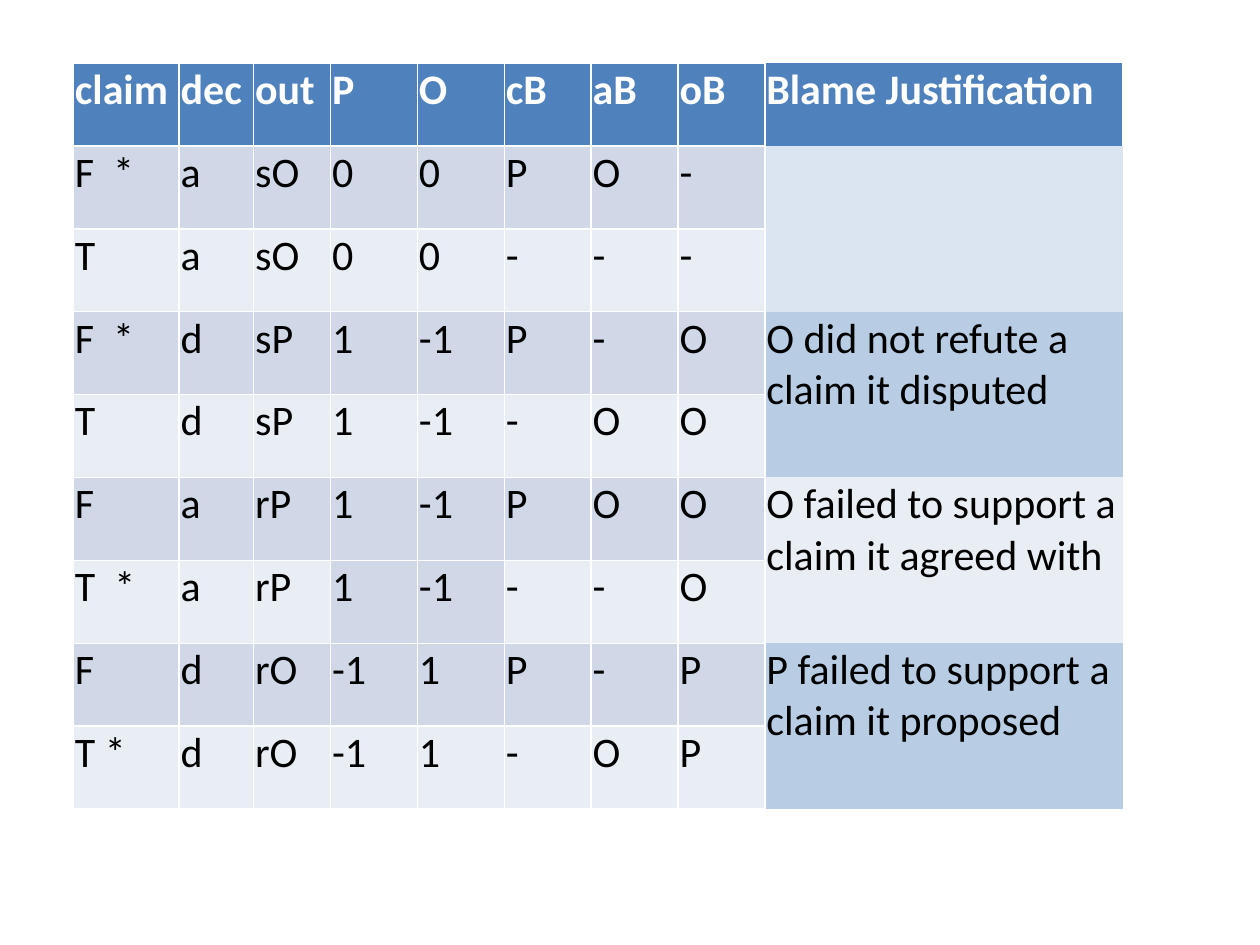
import pptx
import pptx.dml.color
import pptx.oxml
import pptx.oxml.ns
import pptx.util

Cm = pptx.util.Cm
Pt = pptx.util.Pt

HUES = {
    "head": "4F81BD", "odd": "D0D8E8", "even": "E9EDF4",
    "pale": "DBE5F1", "mid": "B8CCE4",
    "white": "FFFFFF", "black": "000000",
}
WIDTHS = [2.13, 1.5, 1.55] + [1.75] * 5 + [7.21]
HEADS = ["claim", "dec", "out", "P", "O", "cB", "aB", "oB",
         "Blame Justification"]
CASES = [
    ["F  *", "a", "sO", "0", "0", "P", "O", "-"],
    ["T", "a", "sO", "0", "0", "-", "-", "-"],
    ["F  *", "d", "sP", "1", "-1", "P", "-", "O"],
    ["T", "d", "sP", "1", "-1", "-", "O", "O"],
    ["F", "a", "rP", "1", "-1", "P", "O", "O"],
    ["T  *", "a", "rP", "1", "-1", "-", "-", "O"],
    ["F", "d", "rO", "-1", "1", "P", "-", "P"],
    ["T *", "d", "rO", "-1", "1", "-", "O", "P"],
]
# Each reason covers two cases
REASONS = [
    ("", "pale"),
    ("O did not refute a claim it disputed", "mid"),
    ("O failed to support a claim it agreed with", "even"),
    ("P failed to support a claim it proposed", "mid"),
]
MARKED = {(6, 3), (6, 4)}  # even-row cells that keep the odd-row fill
INSETS = {"margin_left": Cm(0.03), "margin_top": Cm(0.03),
          "margin_right": Cm(0.03), "margin_bottom": 0}


def color(name):
    return pptx.dml.color.RGBColor.from_string(HUES[name])


def edge(cell, sides):
    """Draw the sides given as {side: points}; leave the others bare."""
    props = cell._tc.get_or_add_tcPr()
    for side in "LRTB":
        size = sides.get(side, 0)
        paint = (f'<a:solidFill><a:srgbClr val="{HUES["white"]}"/></a:solidFill>'
                 if size else "<a:noFill/>")
        props.append(pptx.oxml.parse_xml(
            f'<a:ln{side} {pptx.oxml.ns.nsdecls("a")} w="{Pt(size)}">'
            f'{paint}</a:ln{side}>'))


def style(cell, text, fill, sides, ink="black", bold=False):
    edge(cell, sides)
    cell.fill.solid()
    cell.fill.fore_color.rgb = color(fill)
    for name, value in INSETS.items():
        setattr(cell, name, value)
    if text:
        run = cell.text_frame.paragraphs[0].add_run()
        run.text = text
        font = {"name": "Calibri", "size": Pt(24), "bold": bold}
        for name, value in font.items():
            setattr(run.font, name, value)
        run.font.color.rgb = color(ink)


def blame(slide, left, top, width, height):
    rows, cols = len(CASES) + 1, len(HEADS)
    grid = slide.shapes.add_table(rows, cols, Cm(left), Cm(top),
                                  Cm(width), Cm(height)).table
    for col, part in zip(grid.columns, WIDTHS):
        col.width = Cm(width * part / sum(WIDTHS))
    for row in grid.rows:
        row.height = Cm(height / rows)
    last = cols - 1

    # Header row
    for c, text in enumerate(HEADS):
        sides = {"L": 1, "R": 1}
        if c < last:
            sides.update(T=1, B=1.5)
        style(grid.cell(0, c), text, "head", sides, "white", True)

    # Case rows
    for r, case in enumerate(CASES, 1):
        for c, text in enumerate(case):
            fill = "odd" if r % 2 or (r, c) in MARKED else "even"
            sides = {"L": 1, "R": 1, "T": 1.5 if r == 1 else 1, "B": 1}
            style(grid.cell(r, c), text, fill, sides)

    # Reasons, merged over pairs of rows
    for i, (text, fill) in enumerate(REASONS):
        upper, lower = (grid.cell(2 * i + k, last) for k in (1, 2))
        upper.merge(lower)
        style(upper, text, fill, {"L": 1})
        style(lower, "", fill, {"L": 1})


def main():
    deck = pptx.Presentation()
    deck.slide_width, deck.slide_height = Cm(25.4), Cm(19.05)
    slide = deck.slides.add_slide(deck.slide_layouts[6])
    blame(slide, 1.48, 1.27, 21.16, 15.04)
    deck.save("out.pptx")


if __name__ == "__main__":
    main()
